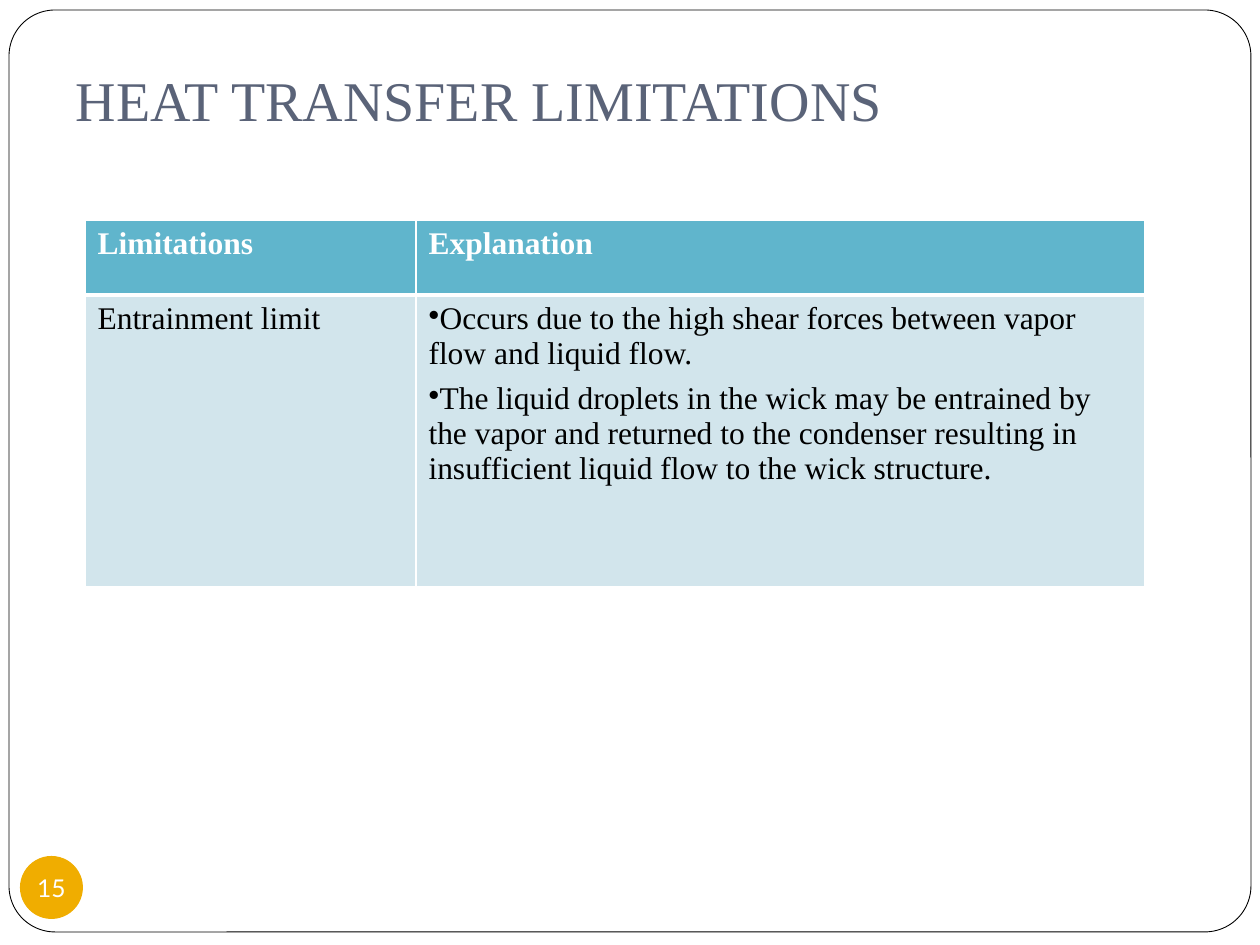
from lxml.etree import SubElement as Sub
from pptx import Presentation
from pptx.dml.color import RGBColor
from pptx.enum.shapes import MSO_SHAPE as Shape
from pptx.enum.text import MSO_ANCHOR as Anchor, PP_ALIGN as Align
from pptx.oxml.ns import qn
from pptx.util import Pt

PX = 914400 // 126
SERIF, SANS = "Times New Roman", "Lato"
WHITE, BLACK, SLATE, GOLD = "FFFFFF", "000000", "5A6378", "F0AD00"
TEAL, PALE = "60B5CC", "D2E5EC"

# Content
TITLE = "HEAT TRANSFER LIMITATIONS"
NUMBER = "15"
HEAD = ["Limitations", "Explanation"]
LIMIT = "Entrainment limit"
POINTS = [
    "Occurs due to the high shear forces between vapor flow and liquid flow.",
    "The liquid droplets in the wick may be entrained by the vapor and "
    "returned to the condenser resulting in insufficient liquid flow to "
    "the wick structure.",
]
ROWS = [[[HEAD[0]], [HEAD[1]]], [[LIMIT], POINTS]]
COLS, HEIGHTS = [331, 729], [75, 292]


def px(*vals):
    return [v * PX for v in vals]


def rgb(code):
    return RGBColor.from_string(code)


def style(par, size, color, face=SERIF, bold=False):
    font = par.font
    font.size, font.name, font.bold = Pt(size), face, bold
    font.color.rgb = rgb(color)


def inset(frame, *sides):
    (frame.margin_left, frame.margin_top,
     frame.margin_right, frame.margin_bottom) = px(*sides)


def add_shape(kind, box, color):
    shape = slide.shapes.add_shape(kind, *px(*box))
    shape.shadow.inherit = False
    shape.fill.solid()
    shape.fill.fore_color.rgb = rgb(color)
    return shape


def border(cell, side, width):
    line = Sub(cell._tc.get_or_add_tcPr(), qn("a:ln" + side), w=str(Pt(width)))
    Sub(Sub(line, qn("a:solidFill")), qn("a:srgbClr"), val=WHITE)


def bullet(par):
    par.space_after = Pt(6)
    Sub(par._p.get_or_add_pPr(), qn("a:buChar"), char="•")


deck = Presentation()
deck.slide_width, deck.slide_height = px(1260, 945)
slide = deck.slides.add_slide(deck.slide_layouts[5])

# Title
title = slide.shapes.title
title.left, title.top, title.width, title.height = px(63, 42, 1134, 104)
title.text = TITLE
text = title.text_frame
text.vertical_anchor = Anchor.BOTTOM
inset(text, 13, 6, 13, 13)
text.paragraphs[0].alignment = Align.LEFT
style(text.paragraphs[0], 32, SLATE)

# Rounded frame, behind the title
frame = add_shape(Shape.ROUNDED_RECTANGLE, (9, 10, 1242, 922), WHITE)
frame.adjustments[0] = 0.05
frame.line.color.rgb = rgb(BLACK)
frame.line.width = Pt(0.5)
title._element.addprevious(frame._element)

# Slide number
badge = add_shape(Shape.OVAL, (20, 856, 63, 63), GOLD)
badge.line.fill.background()
text = badge.text_frame
text.text = NUMBER
text.word_wrap = False
text.vertical_anchor = Anchor.MIDDLE
inset(text, 0, 0, 0, 0)
text.paragraphs[0].alignment = Align.CENTER
style(text.paragraphs[0], 14, WHITE, SANS)

# Table
box = px(85, 220, sum(COLS), sum(HEIGHTS))
table = slide.shapes.add_table(len(ROWS), len(COLS), *box).table
for col, width in zip(table.columns, COLS):
    col.width = width * PX
for r, (row, height) in enumerate(zip(ROWS, HEIGHTS)):
    table.rows[r].height = height * PX
    head = r == 0
    for c, lines in enumerate(row):
        cell = table.cell(r, c)
        for side in "LRTB":
            thick = side == ("B" if head else "T")
            border(cell, side, 3 if thick else 1)
        cell.fill.solid()
        cell.fill.fore_color.rgb = rgb(TEAL if head else PALE)
        cell.text = "\n".join(lines)
        for par in cell.text_frame.paragraphs:
            style(par, 18, WHITE if head else BLACK, bold=head)
            if lines is POINTS:
                bullet(par)

deck.save("out.pptx")
